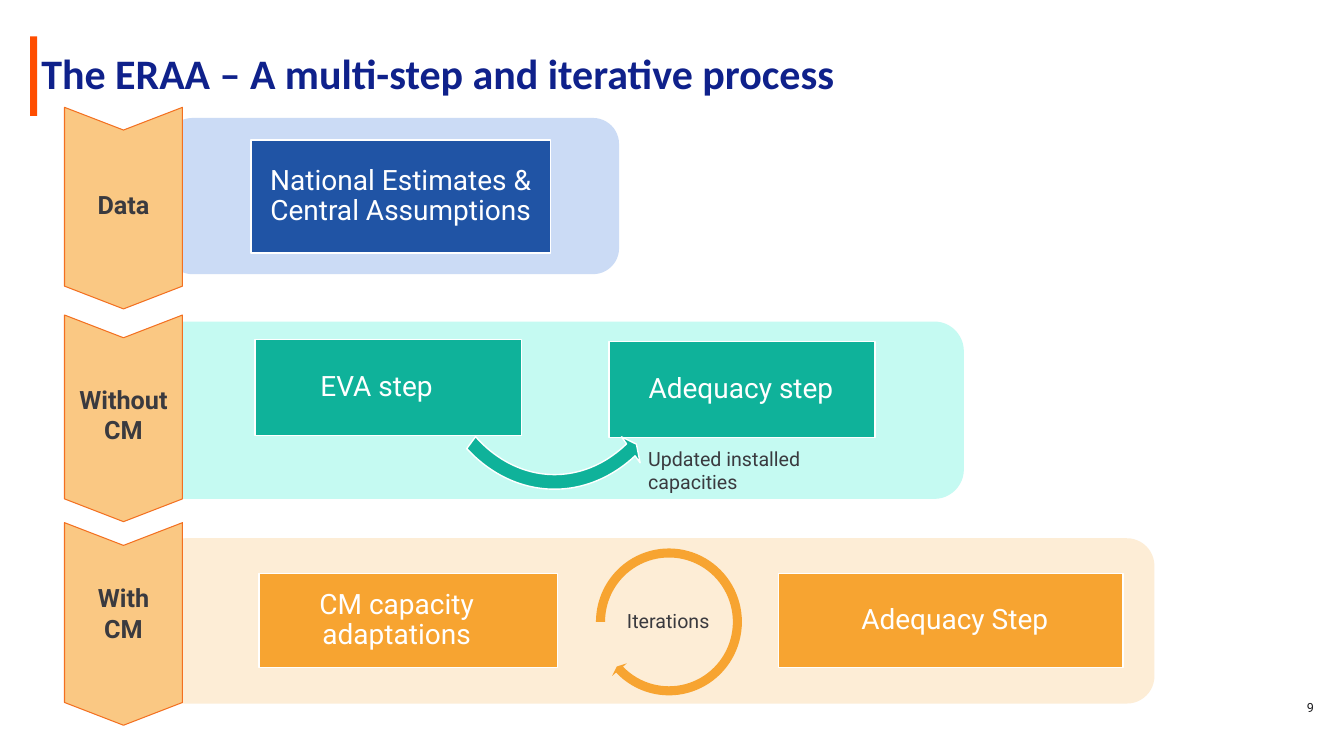
from pptx import Presentation
from pptx.dml.color import RGBColor
from pptx.enum.shapes import MSO_SHAPE
from pptx.enum.text import MSO_ANCHOR, PP_ALIGN
from pptx.util import Inches, Pt

RECT, ROUNDED, CHEVRON = MSO_SHAPE.RECTANGLE, MSO_SHAPE.ROUNDED_RECTANGLE, MSO_SHAPE.CHEVRON
LEFT_ARC, LOOP = MSO_SHAPE.LEFT_CIRCULAR_ARROW, MSO_SHAPE.CIRCULAR_ARROW
TOP, MIDDLE = MSO_ANCHOR.TOP, MSO_ANCHOR.MIDDLE
LEFT, CENTER, RIGHT = PP_ALIGN.LEFT, PP_ALIGN.CENTER, PP_ALIGN.RIGHT

# Content: every length is in grid cells, ten to the inch
TITLE = "The ERAA – A multi-step and iterative process"
PAGE = "9"
STAGES = [
    {"label": "Data", "label_mid": 20.3, "chevron_length": 20, "band": (16.5, 11.7, 44.9, 15.5),
     "tint": "data_tint", "color": "data",
     "steps": [("National Estimates & Central Assumptions", (24.9, 13.9, 29.7, 11.2), (1.5, 1.5))]},
    {"label": "Without CM", "label_mid": 41.1, "chevron_length": 20.5, "band": (15.5, 31.9, 80.1, 17.6),
     "tint": "without_tint", "color": "without",
     "steps": [("EVA step", (25.3, 33.7, 26.4, 9.5), (1.5, 3.8)),
               ("Adequacy step", (60.4, 33.9, 26.4, 9.5), (3.6, 3.8))]},
    {"label": "With CM", "label_mid": 60.8, "chevron_length": 20.1, "band": (15.6, 53.4, 98.9, 16.4),
     "tint": "with_tint", "color": "with",
     "steps": [("CM capacity adaptations", (25.7, 56.9, 29.6, 9.3), (1.5, 3.8)),
               ("Adequacy Step", (77.2, 56.9, 34.2, 9.3), (8, 7.2))]},
]
NOTES = [("Updated installed capacities", (63.3, 43.8, 18.7, 5.7)),
         ("Iterations", (61.2, 59.9, 11, 3.4))]
# Arrow shape values: thickness, head angle, end angle, start angle, head width
CAPACITY_ARROW = ((41.1, 16.1, 27.8, 33.3), (0.052, 3.16, 57.5, 126.5, 0.057))
ITERATION_ARROW = ((58.6, 53.9, 15.5, 15.6), (0.058, 3.44, 136, 180, 0.062))
CHEVRON_MID, CHEVRON_TOP, CHEVRON_PITCH, CHEVRON_WIDTH = 12.25, 10.65, 20.6, 11.7
LABEL_WIDTH, LABEL_HEIGHT = 11.5, 7.3

THEME = {
    "color": {"title": "0F218B", "accent": "FF4D00", "text": "3A3A3F", "page": "1D1D20",
              "white": "FFFFFF", "chevron": "FAC883", "chevron_line": "F37020",
              "data": "2054A5", "data_tint": "CBDBF5", "without": "0FB29A",
              "without_tint": "C5FAF2", "with": "F7A431", "with_tint": "FDEDD6"},
    "size": {"title": 30, "step": 20, "label": 18, "note": 14, "page": 9},
    "font": {"title": "Calibri", "body": "Roboto"},
}


def color(name):
    return RGBColor.from_string(THEME["color"][name])


def cells(box):
    return [Inches(length / 10) for length in box]


def apply(target, values):
    for name, value in values.items():
        setattr(target, name, value)


def write(shape, text, role, tone, align=LEFT, anchor=TOP, insets=(1, 1), bold=False,
          spacing=1.0, face="body"):
    frame = shape.text_frame
    left, right = cells(insets)
    apply(frame, {"text": text, "word_wrap": True, "vertical_anchor": anchor,
                  "margin_left": left, "margin_right": right,
                  "margin_top": Inches(0.05), "margin_bottom": Inches(0.05)})
    paragraph = frame.paragraphs[0]
    apply(paragraph, {"alignment": align, "line_spacing": spacing})
    font = paragraph.runs[0].font
    apply(font, {"name": THEME["font"][face], "size": Pt(THEME["size"][role]), "bold": bold})
    font.color.rgb = color(tone)


def draw(slide, kind, box, fill, line=None, weight=1):
    shape = slide.shapes.add_shape(kind, *cells(box))
    shape.shadow.inherit = False
    shape.fill.solid()
    shape.fill.fore_color.rgb = color(fill)
    if line:
        shape.line.color.rgb = color(line)
        shape.line.width = Pt(weight)
    else:
        shape.line.fill.background()
    return shape


def label(slide, box, *args, **options):
    write(slide.shapes.add_textbox(*cells(box)), *args, **options)


def draw_arc(slide, kind, arrow, fill, line=None):
    box, (thickness, head, end, start, head_width) = arrow
    arc = draw(slide, kind, box, fill, line)
    # Angles are stored in 60000ths of a degree, shares in 100000ths
    values = [thickness, head * 0.6, end * 0.6, start * 0.6, head_width]
    for index, value in enumerate(values):
        arc.adjustments[index] = value


def main():
    deck = Presentation()
    apply(deck, {"slide_width": Inches(13.33), "slide_height": Inches(7.5)})
    slide = deck.slides.add_slide(deck.slide_layouts[5])

    # Title, accent bar and page number
    draw(slide, RECT, (3, 3.6, 0.7, 7.9), "accent")
    title = slide.shapes.title
    apply(title, dict(zip(("left", "top", "width", "height"), cells((3.1, 4.8, 127.1, 10.2)))))
    write(title, TITLE, "title", "title", bold=True, spacing=Pt(32), face="title")
    label(slide, (67.5, 68.2, 63.8, 4), PAGE, "page", "page", align=RIGHT, anchor=MIDDLE)

    # Bands with their steps
    for stage in STAGES:
        draw(slide, ROUNDED, stage["band"], stage["tint"])
        for text, box, insets in stage["steps"]:
            step = draw(slide, RECT, box, stage["color"], "white")
            write(step, text, "step", "white", CENTER, MIDDLE, insets, spacing=0.9)

    # Curved arrows and their notes
    draw_arc(slide, LEFT_ARC, CAPACITY_ARROW, "without", "white")
    draw_arc(slide, LOOP, ITERATION_ARROW, "with")
    for text, box in NOTES:
        label(slide, box, text, "note", "text")

    # Downward chevrons, one pitch apart, with upright labels
    for index, stage in enumerate(STAGES):
        length = stage["chevron_length"]
        middle = CHEVRON_TOP + index * CHEVRON_PITCH + length / 2
        box = (CHEVRON_MID - length / 2, middle - CHEVRON_WIDTH / 2, length, CHEVRON_WIDTH)
        chevron = draw(slide, CHEVRON, box, "chevron", "chevron_line", 0.75)
        chevron.rotation = 90
        chevron.adjustments[0] = 0.193
        label(slide, (CHEVRON_MID - LABEL_WIDTH / 2, stage["label_mid"] - LABEL_HEIGHT / 2,
                      LABEL_WIDTH, LABEL_HEIGHT),
              stage["label"], "label", "text", align=CENTER, anchor=MIDDLE, bold=True)

    deck.save("out.pptx")


if __name__ == "__main__":
    main()
